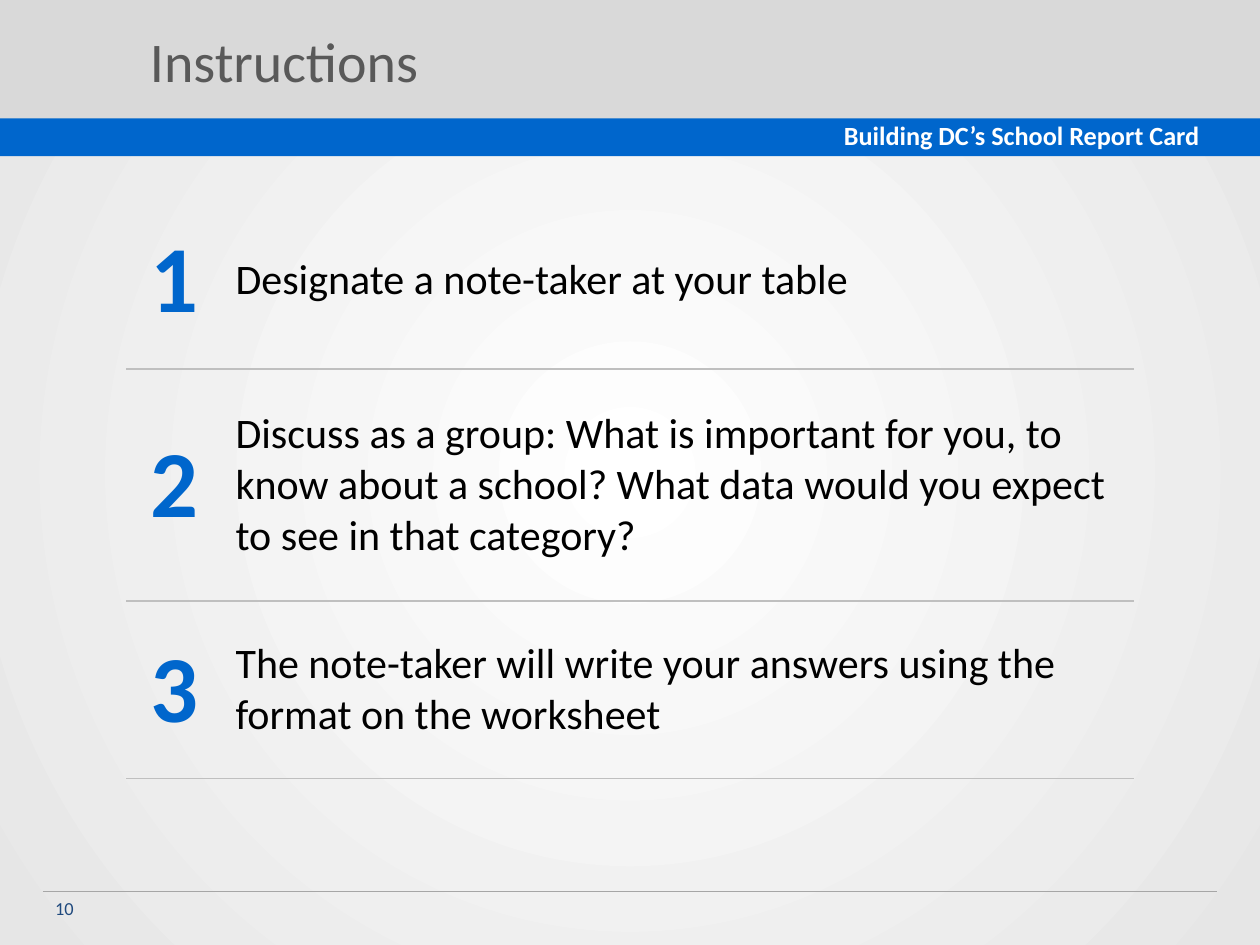
import pptx
import pptx.dml.color
import pptx.enum.shapes
import pptx.enum.text
import pptx.oxml.ns
import pptx.util
from lxml import etree

Inches, Pt = pptx.util.Inches, pptx.util.Pt
RGBColor = pptx.dml.color.RGBColor
ALIGN = pptx.enum.text.PP_ALIGN
ANCHOR = pptx.enum.text.MSO_ANCHOR
qn = pptx.oxml.ns.qn

WHITE = RGBColor(0xFF, 0xFF, 0xFF)
BLACK = RGBColor(0, 0, 0)
EDGE = RGBColor(0xE6, 0xE6, 0xE6)
HEADER = RGBColor(0xD9, 0xD9, 0xD9)
RULE = RGBColor(0xBF, 0xBF, 0xBF)
FOOT_RULE = RGBColor(0xA6, 0xA6, 0xA6)
BLUE = RGBColor(0x00, 0x66, 0xCC)
NAVY = RGBColor(0x1F, 0x49, 0x7D)
GREY = RGBColor(0x59, 0x59, 0x59)

PLAIN_TABLE = "{2D5ABB26-0587-4C30-8999-92F81FD0307C}"
STEPS = [
    "Designate a note-taker at your table",
    "Discuss as a group: What is important for you, to know about a school? "
    "What data would you expect to see in that category?",
    "The note-taker will write your answers using the format on the worksheet",
]


class Deck:
    font = "Calibri"

    def __init__(self, prs):
        self.prs = prs
        self.s = prs.slides.add_slide(prs.slide_layouts[5])

    def background(self, centre, edge):
        fill = self.s.background.fill
        fill.gradient()
        for stop, color in zip(fill.gradient_stops, (centre, edge)):
            stop.color.rgb = color
        # Turn the linear gradient into a circular one
        lin = self.s._element.find(".//" + qn("a:lin"))
        grad = lin.getparent()
        grad.remove(lin)
        circle = etree.SubElement(grad, qn("a:path"), {"path": "circle"})
        etree.SubElement(circle, qn("a:fillToRect"),
                         l="50000", t="50000", r="50000", b="50000")

    def add_run(self, tf, text, size, color, bold=False, align=ALIGN.LEFT):
        p = tf.paragraphs[0]
        p.alignment = align
        r = p.add_run()
        r.text = text
        r.font.name, r.font.size, r.font.bold = self.font, Pt(size), bold
        r.font.color.rgb = color

    def title(self, text, x, y, w, h):
        sp = self.s.shapes.title
        sp.left, sp.top, sp.width, sp.height = map(Inches, (x, y, w, h))
        sp.text_frame.vertical_anchor = ANCHOR.MIDDLE
        self.add_run(sp.text_frame, text, 32, GREY)

    def bar(self, x, y, w, h, color):
        sp = self.s.shapes.add_shape(pptx.enum.shapes.MSO_SHAPE.RECTANGLE,
                                     *map(Inches, (x, y, w, h)))
        sp.shadow.inherit = False
        sp.fill.solid()
        sp.fill.fore_color.rgb = color
        sp.line.fill.background()

    def text(self, text, x, y, w, h, size, color, bold=False):
        tf = self.s.shapes.add_textbox(*map(Inches, (x, y, w, h))).text_frame
        tf.word_wrap = True
        self.add_run(tf, text, size, color, bold)

    def line(self, x1, y1, x2, y2, color, width):
        cn = self.s.shapes.add_connector(pptx.enum.shapes.MSO_CONNECTOR.STRAIGHT,
                                         *map(Inches, (x1, y1, x2, y2)))
        cn.line.color.rgb = color
        cn.line.width = Pt(width)
        etree.SubElement(cn._element.spPr, qn("a:effectLst"))

    def bottom_border(self, cell, color, width):
        ln = etree.Element(qn("a:lnB"), w=str(Pt(width)))
        fill = etree.SubElement(ln, qn("a:solidFill"))
        etree.SubElement(fill, qn("a:srgbClr"), val=str(color))
        cell._tc.get_or_add_tcPr().insert(0, ln)

    def steps(self, items, x, y, cols, rows):
        tbl = self.s.shapes.add_table(
            len(rows), len(cols),
            *map(Inches, (x, y, sum(cols), sum(rows)))).table
        tbl.first_row = tbl.horz_banding = False
        tbl._tbl.tblPr.find(qn("a:tableStyleId")).text = PLAIN_TABLE
        for col, width in zip(tbl.columns, cols):
            col.width = Inches(width)
        for i, (item, height) in enumerate(zip(items, rows)):
            tbl.rows[i].height = Inches(height)
            number, step = tbl.cell(i, 0), tbl.cell(i, 1)
            for cell in (number, step):
                cell.vertical_anchor = ANCHOR.MIDDLE
                cell.fill.background()
                self.bottom_border(cell, RULE, 1)
            self.add_run(number.text_frame, str(i + 1), 54, BLUE, True, ALIGN.CENTER)
            self.add_run(step.text_frame, item, 24, BLACK)


def main():
    prs = pptx.Presentation()
    prs.slide_width, prs.slide_height = Inches(10), Inches(7.5)
    deck = Deck(prs)
    deck.background(WHITE, EDGE)

    # Header band and banner
    deck.bar(0, 0, 10, 1.01, HEADER)
    deck.bar(0, 0.94, 10, 0.3, BLUE)
    deck.text("Building DC’s School Report Card", 6.6, 0.9, 3.4, 0.35, 15, WHITE, True)

    # Numbered steps
    deck.steps(STEPS, 1, 1.52, cols=[0.77, 7.23], rows=[1.41, 1.84, 1.41])

    # Footer
    deck.line(0.34, 7.07, 9.66, 7.07, FOOT_RULE, 0.25)
    deck.text("10", 0.34, 7.07, 2.33, 0.4, 10.5, NAVY)

    # Title, brought in front of the header band
    deck.title("Instructions", 1.09, 0.12, 8.65, 0.71)
    deck.s.shapes._spTree.append(deck.s.shapes.title._element)

    prs.save("out.pptx")


if __name__ == "__main__":
    main()
